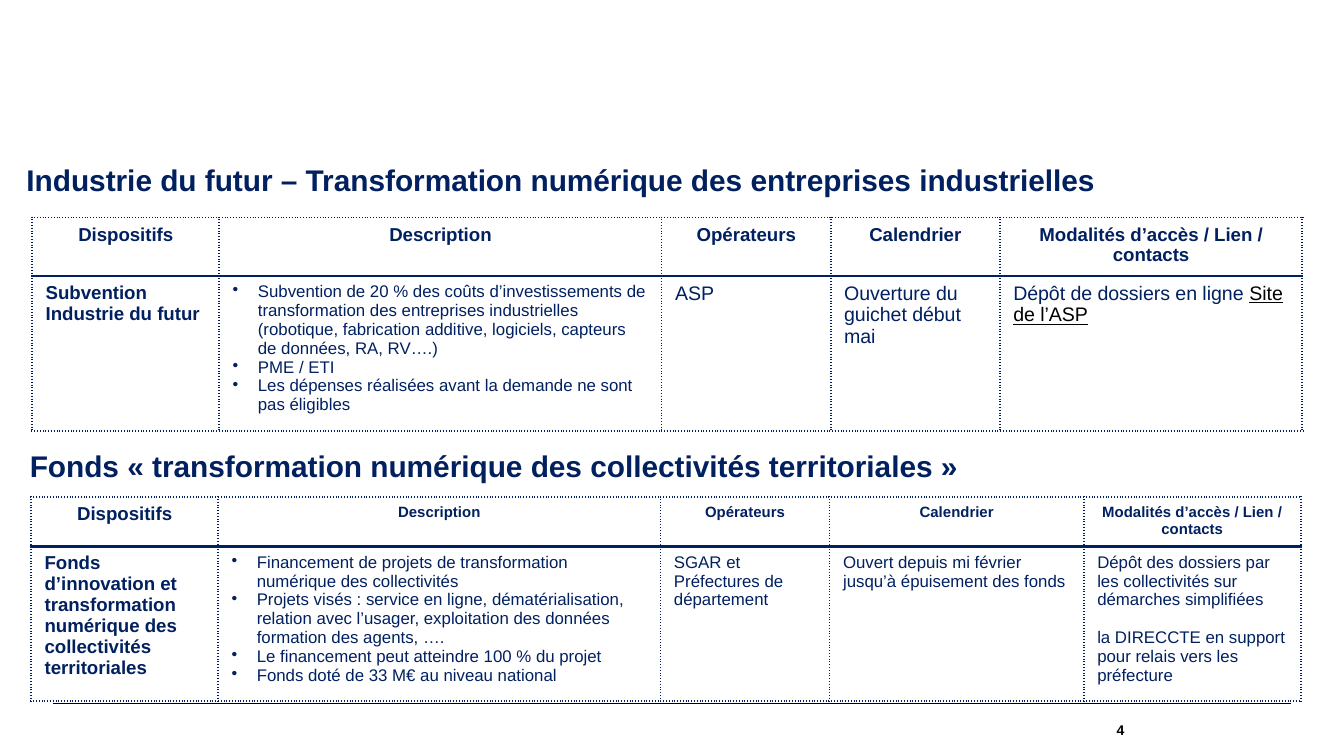
import pptx
import pptx.dml.color
import pptx.enum.shapes
import pptx.enum.text
import pptx.oxml
import pptx.oxml.ns
import pptx.util
from dataclasses import dataclass

Pt = pptx.util.Pt
ALIGN = pptx.enum.text.PP_ALIGN
ANCHOR = pptx.enum.text.MSO_ANCHOR


@dataclass(frozen=True)
class Theme:
    font: str = "Arial"
    navy: str = "002060"
    black: str = "000000"
    title: float = 16
    heading: float = 10
    small_heading: float = 8
    large_body: float = 10.5
    body: float = 9
    page_number: float = 7.5
    rule: float = 0.8
    dotted: float = 1
    solid: float = 1.5
    indent: float = 13.5
    gap: float = 10.3


@dataclass(frozen=True)
class Entry:
    paragraphs: tuple
    size: float
    bold: bool = False
    bullets: bool = False
    align: object = ALIGN.LEFT
    link: str = ""
    gap: float = 0


class SlideBuilder:
    def __init__(self, slide, theme):
        self.slide = slide
        self.theme = theme

    def format_span(self, span, size, color, bold=False):
        span.font.name = self.theme.font
        span.font.size = Pt(size)
        span.font.bold = bold
        span.font.color.rgb = pptx.dml.color.RGBColor.from_string(color)

    def text(self, words, left, top, width, height, size, color,
             align=ALIGN.LEFT, anchor=ANCHOR.TOP, line_spacing=None):
        box = self.slide.shapes.add_textbox(Pt(left), Pt(top), Pt(width), Pt(height))
        frame = box.text_frame
        frame.word_wrap = True
        frame.vertical_anchor = anchor
        frame.margin_left = frame.margin_right = 0
        frame.margin_top = frame.margin_bottom = 0
        frame.text = words
        para = frame.paragraphs[0]
        para.alignment = align
        para.line_spacing = line_spacing
        self.format_span(para.runs[0], size, color, bold=True)

    def title(self, words, left, top):
        self.text(words, left, top, 692, 34, self.theme.title, self.theme.navy,
                  line_spacing=0.9)

    def rule(self, left, right, top):
        line = self.slide.shapes.add_connector(
            pptx.enum.shapes.MSO_CONNECTOR.STRAIGHT, Pt(left), Pt(top), Pt(right), Pt(top))
        line.line.width = Pt(self.theme.rule)
        line.line.color.rgb = pptx.dml.color.RGBColor.from_string(self.theme.black)
        properties = line._element.spPr
        properties.append(properties.makeelement(pptx.oxml.ns.qn("a:effectLst"), {}))

    def bullet(self, para):
        properties = para._p.get_or_add_pPr()
        indent = Pt(self.theme.indent)
        properties.set("marL", str(indent))
        properties.set("indent", str(-indent))
        mark = properties.makeelement(pptx.oxml.ns.qn("a:buChar"), {"char": "•"})
        properties.append(mark)

    def borders(self, cell, solid_side):
        properties = cell._tc.get_or_add_tcPr()
        for side in "LRTB":
            solid = side == solid_side
            width = Pt(self.theme.solid if solid else self.theme.dotted)
            dash = "solid" if solid else "sysDot"
            properties.append(pptx.oxml.parse_xml(
                f'<a:ln{side} {pptx.oxml.ns.nsdecls("a")} w="{width}">'
                f'<a:solidFill><a:srgbClr val="{self.theme.navy}"/></a:solidFill>'
                f'<a:prstDash val="{dash}"/></a:ln{side}>'))

    def fill_cell(self, cell, entry, solid_side):
        self.borders(cell, solid_side)
        cell.fill.background()
        cell.text_frame.text = "\n".join(entry.paragraphs)
        for index, para in enumerate(cell.text_frame.paragraphs):
            if entry.bullets:
                self.bullet(para)
            para.alignment = entry.align
            if index and entry.gap:
                para.space_before = Pt(entry.gap)
            self.format_span(para.runs[0], entry.size, self.theme.navy, entry.bold)
        if entry.link:
            span = para.add_run()
            span.text = entry.link
            self.format_span(span, entry.size, self.theme.black)
            span.font.underline = True

    def table(self, left, top, widths, heights, rows):
        frame = self.slide.shapes.add_table(
            len(rows), len(widths), Pt(left), Pt(top), Pt(sum(widths)), Pt(sum(heights)))
        table = frame.table
        table.first_row = False
        table.horz_banding = False
        for column, width in zip(table.columns, widths):
            column.width = Pt(width)
        for row, height, entries, side in zip(table.rows, heights, rows, "BT"):
            row.height = Pt(height)
            for cell, entry in zip(row.cells, entries):
                self.fill_cell(cell, entry, side)


def header(sizes):
    labels = ("Dispositifs", "Description", "Opérateurs", "Calendrier",
              "Modalités d’accès / Lien / contacts")
    return [Entry((label,), size, bold=True, align=ALIGN.CENTER)
            for label, size in zip(labels, sizes)]


def main():
    theme = Theme()
    deck = pptx.Presentation()
    deck.slide_width, deck.slide_height = Pt(720), Pt(405)
    page = SlideBuilder(deck.slides.add_slide(deck.slide_layouts[6]), theme)

    page.rule(28.4, 691.6, 376.8)
    page.text("4", 496, 376.8, 106.4, 28, theme.page_number, theme.black,
              align=ALIGN.RIGHT, anchor=ANCHOR.MIDDLE)

    page.title("Industrie du futur – Transformation numérique des entreprises industrielles",
               14.2, 88.6)
    industry = [
        Entry(("Subvention Industrie du futur",), theme.heading, bold=True),
        Entry(("Subvention de 20 % des coûts d’investissements de transformation des "
               "entreprises industrielles (robotique, fabrication additive, logiciels, "
               "capteurs de données, RA, RV….)",
               "PME / ETI",
               "Les dépenses réalisées avant la demande ne sont pas éligibles"),
              theme.body, bullets=True),
        Entry(("ASP",), theme.large_body),
        Entry(("Ouverture du guichet début mai",), theme.large_body),
        Entry(("Dépôt de dossiers en ligne ",), theme.large_body, link="Site de l’ASP"),
    ]
    page.table(17.3, 116.5, (100.2, 237, 90.6, 90.6, 162), (29.4, 78.2),
               [header([theme.heading] * 5), industry])

    page.title("Fonds « transformation numérique des collectivités territoriales »",
               16, 242.2)
    communities = [
        Entry(("Fonds d’innovation et transformation numérique des collectivités "
               "territoriales",), theme.heading, bold=True),
        Entry(("Financement de projets de transformation numérique des collectivités",
               "Projets visés : service en ligne, dématérialisation, relation avec "
               "l’usager, exploitation des données formation des agents, ….",
               "Le financement peut atteindre 100 % du projet",
               "Fonds doté de 33 M€ au niveau national"),
              theme.body, bullets=True),
        Entry(("SGAR et Préfectures de département",), theme.body),
        Entry(("Ouvert depuis mi février jusqu’à épuisement des fonds",), theme.body),
        Entry(("Dépôt des dossiers par les collectivités sur démarches simplifiées",
               "la DIRECCTE en support pour relais vers les préfecture"),
              theme.body, gap=theme.gap),
    ]
    page.table(16.7, 266.3, (100.2, 237, 90.6, 136.2, 116.2), (25.2, 81.2),
               [header([theme.heading] + [theme.small_heading] * 4), communities])

    deck.save("out.pptx")


if __name__ == "__main__":
    main()
